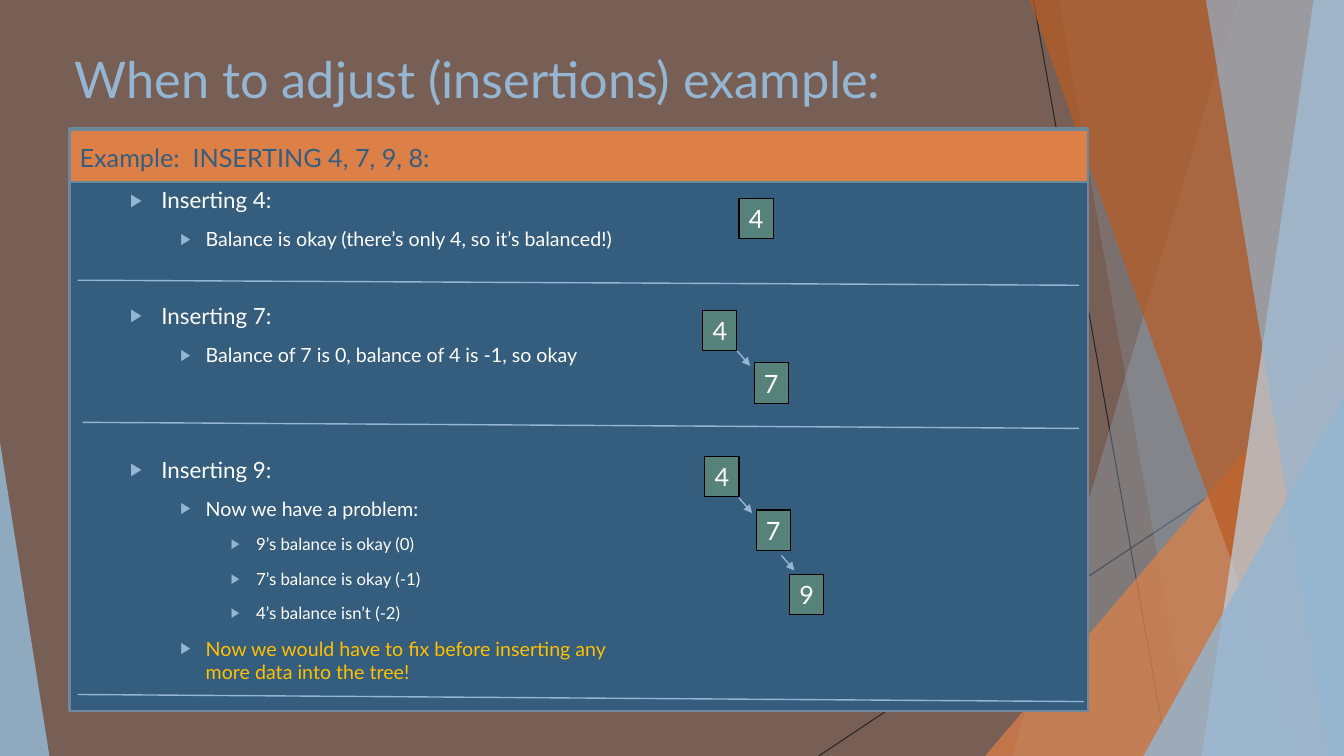
from dataclasses import dataclass

from lxml import etree
from pptx import Presentation
from pptx.dml.color import RGBColor
from pptx.enum.shapes import MSO_CONNECTOR, MSO_SHAPE
from pptx.enum.text import MSO_ANCHOR, MSO_AUTO_SIZE, PP_ALIGN
from pptx.oxml.ns import qn
from pptx.util import Pt

RECT, TRIANGLE = MSO_SHAPE.RECTANGLE, MSO_SHAPE.ISOSCELES_TRIANGLE
STRAIGHT = MSO_CONNECTOR.STRAIGHT
TOP, MIDDLE = MSO_ANCHOR.TOP, MSO_ANCHOR.MIDDLE
LEFT, CENTER = PP_ALIGN.LEFT, PP_ALIGN.CENTER
NO_AUTOSIZE = MSO_AUTO_SIZE.NONE

PX = 9144  # EMU per px, 100 px to the inch
W, H = 1333, 750


@dataclass(frozen=True)
class Theme:
    font: str = "Lato"
    back: str = "775F55"
    sky: str = "94B6D2"
    pale: str = "BFD3E4"
    orange: str = "DD8047"
    rust: str = "B95B22"
    navy: str = "355D7E"
    border: str = "6D879B"
    node: str = "578279"
    white: str = "FFFFFF"
    black: str = "000000"
    dark: str = "262626"
    alert: str = "FFC000"
    title_size: int = 36
    node_size: int = 18
    level_sizes: tuple = (18, 16, 14, 12)
    # left margin and hanging indent of each list level, px
    indents: tuple = ((0, 0), (81, -31), (125, -25), (175, -25))
    space: float = 10
    row_gap: float = 26.8  # one skipped list row, points


class Deck:
    def __init__(self, theme):
        self.t = theme
        self.prs = Presentation()
        self.prs.slide_width, self.prs.slide_height = W * PX, H * PX
        self.s = self.prs.slides.add_slide(self.prs.slide_layouts[1])
        fill = self.s.background.fill
        fill.solid()
        fill.fore_color.rgb = RGBColor.from_string(theme.back)

    def paint(self, sp, color, alpha=100, line=None, width=0.75):
        sp.shadow.inherit = False
        sp.fill.solid()
        sp.fill.fore_color.rgb = RGBColor.from_string(color)
        if alpha < 100:
            clr = sp._element.spPr.find(".//" + qn("a:srgbClr"))
            etree.SubElement(clr, qn("a:alpha"), val=str(alpha * 1000))
        if line:
            sp.line.color.rgb = RGBColor.from_string(line)
            sp.line.width = Pt(width)
        else:
            sp.line.fill.background()
        return sp

    def shape(self, kind, box, color, **style):
        sp = self.s.shapes.add_shape(kind, *(v * PX for v in box))
        return self.paint(sp, color, **style)

    def triangle(self, box, apex, color, alpha):
        self.shape(TRIANGLE, box, color, alpha=alpha).adjustments[0] = apex

    def wing(self, top_x, bottom_x, color, alpha):
        fb = self.s.shapes.build_freeform(top_x, -1, scale=PX)
        fb.add_line_segments([(W, -1), (W, H), (bottom_x, H)], close=True)
        self.paint(fb.convert_to_shape(), color, alpha)

    def line(self, ends, color, width=1, arrow=False):
        c = self.s.shapes.add_connector(STRAIGHT, *(v * PX for v in ends))
        c.line.color.rgb = RGBColor.from_string(color)
        c.line.width = Pt(width)
        if arrow:
            etree.SubElement(c.line._get_or_add_ln(), qn("a:tailEnd"), type="triangle")
        etree.SubElement(c._element.spPr, qn("a:effectLst"))

    def format(self, p, size, color, align=LEFT):
        p.alignment = align
        for r in p.runs:
            r.font.name, r.font.size = self.t.font, Pt(size)
            r.font.color.rgb = RGBColor.from_string(color)

    def node(self, text, x, y):
        sp = self.shape(RECT, (x, y, 34, 40), self.t.node, line=self.t.black)
        tf = sp.text_frame
        tf.text = text
        tf.word_wrap, tf.vertical_anchor = False, MIDDLE
        self.format(tf.paragraphs[0], self.t.node_size, self.t.white, CENTER)

    def placeholder(self, sp, box):
        sp.left, sp.top, sp.width, sp.height = (v * PX for v in box)
        self.s.shapes._spTree.append(sp._element)  # bring to front
        tf = sp.text_frame
        tf.word_wrap, tf.auto_size, tf.vertical_anchor = True, NO_AUTOSIZE, TOP
        return tf

    def title(self, text, box):
        tf = self.placeholder(self.s.shapes.title, box)
        tf.text = text
        self.format(tf.paragraphs[0], self.t.title_size, self.t.sky)

    def bullet(self, p):
        margin, indent = self.t.indents[p.level]
        pPr = p._p.get_or_add_pPr()
        pPr.set("marL", str(margin * PX))
        pPr.set("indent", str(indent * PX))
        if p.level == 0:
            etree.SubElement(pPr, qn("a:buNone"))
            return
        clr = etree.SubElement(pPr, qn("a:buClr"))
        etree.SubElement(clr, qn("a:srgbClr"), val=self.t.sky)
        etree.SubElement(pPr, qn("a:buSzPct"), val="80000")
        etree.SubElement(pPr, qn("a:buFont"), typeface="Arial")
        etree.SubElement(pPr, qn("a:buChar"), char="▶")

    def body(self, items, box):
        tf = self.placeholder(self.s.placeholders[1], box)
        for i, (level, text, color, skipped) in enumerate(items):
            p = tf.add_paragraph() if i else tf.paragraphs[0]
            p.text, p.level = text, level
            p.line_spacing = 1.0
            p.space_before = Pt(self.t.space + skipped * self.t.row_gap if i else 0)
            p.space_after = Pt(0)
            self.bullet(p)
            self.format(p, self.t.level_sizes[level], color)


def main():
    t = Theme()
    d = Deck(t)

    # Background facets
    for ends in ((1025, 0, 1158, H), (W, 403, 812, H)):
        d.line(ends, t.dark, 0.75)
    d.wing(1228, 1004, t.sky, 30)
    d.wing(1050, 1183, t.sky, 20)
    d.triangle((977, 333, 356, 417), 1, t.orange, 72)
    d.wing(1021, 1291, t.rust, 70)
    d.wing(1303, 1192, t.pale, 70)
    d.wing(1196, 1318, t.sky, 65)
    d.triangle((1134, 393, 199, 357), 1, t.sky, 80)
    d.triangle((0, 439, 49, 311), 0, t.sky, 85)

    # Panel and its header band
    d.shape(RECT, (69, 127, 1010, 578), t.navy, line=t.border, width=1.5)
    d.shape(RECT, (69, 129, 1010, 52), t.orange, line=t.border, width=1.5)

    # Title and list: level, text, colour, rows skipped above
    d.title("When to adjust (insertions) example:", (64, 43, 940, 89))
    d.body([
        (0, "Example:  INSERTING 4, 7, 9, 8:", t.navy, 0),
        (1, "Inserting 4:", t.white, 0),
        (2, "Balance is okay (there’s only 4, so it’s balanced!)", t.white, 0),
        (1, "Inserting 7:", t.white, 1),
        (2, "Balance of 7 is 0, balance of 4 is -1, so okay", t.white, 0),
        (1, "Inserting 9:", t.white, 2),
        (2, "Now we have a problem:", t.white, 0),
        (3, "9’s balance is okay (0)", t.white, 0),
        (3, "7’s balance is okay (-1)", t.white, 0),
        (3, "4’s balance isn’t (-2)", t.white, 0),
        (2, "Now we would have to fix before inserting any more data into the tree!",
         t.alert, 0),
    ], (69, 136, 577, 554))

    # Trees after each insertion
    for key, x, y in (("4", 733, 197),
                      ("4", 697, 308), ("7", 748, 360),
                      ("4", 699, 453), ("7", 750, 506), ("9", 783, 570)):
        d.node(key, x, y)
    for x, y in ((731, 348), (733, 494), (775, 551)):
        d.line((x, y, x + 13, y + 15), t.sky, arrow=True)

    # Dividers between steps
    for ends in ((77, 278, 1070, 283), (82, 419, 1070, 425), (77, 689, 1075, 696)):
        d.line(ends, t.sky)

    d.prs.save("out.pptx")


if __name__ == "__main__":
    main()
